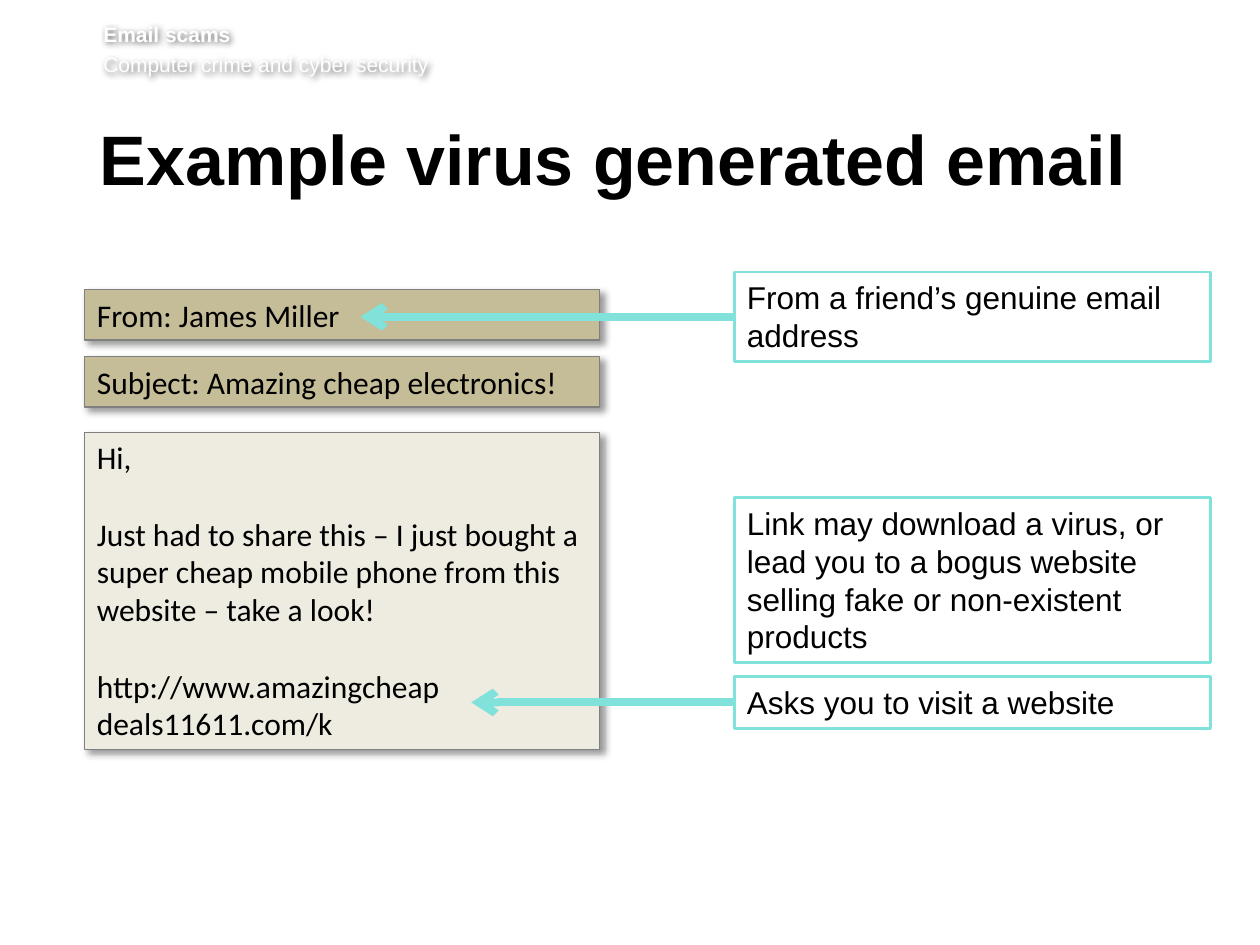
from lxml import etree
from pptx import Presentation
from pptx import util as u
from pptx.dml.color import RGBColor
from pptx.enum import shapes, text
from pptx.oxml import ns

INK, TEAL, SAND, CREAM, GREY = "000000", "81E2DC", "C4BD97", "EEECE1", "808080"


def color(hex_string):
    return RGBColor.from_string(hex_string)


def add_effects(shape, blur=None, distance=0, opacity=40):
    """Give the shape a soft shadow, or an empty effect list without blur."""
    properties = shape._element.spPr
    for old in properties.findall(ns.qn("a:effectLst")):
        properties.remove(old)
    effects = etree.SubElement(properties, ns.qn("a:effectLst"))
    if blur is not None:
        shadow = etree.SubElement(
            effects, ns.qn("a:outerShdw"), blurRad=str(u.Pt(blur)),
            dist=str(u.Pt(distance)), dir="2700000", algn="tl", rotWithShape="0")
        black = etree.SubElement(shadow, ns.qn("a:srgbClr"), val=INK)
        etree.SubElement(black, ns.qn("a:alpha"), val=str(opacity * 1000))


def write(paragraph, words, font="Arial", size=18, ink=INK, bold=False,
          before=0, after=0, line=None):
    paragraph.alignment = text.PP_ALIGN.LEFT
    paragraph.space_before, paragraph.space_after = u.Pt(before), u.Pt(after)
    if line:
        paragraph.line_spacing = u.Pt(line)
    run = paragraph.add_run()
    run.text = words
    run.font.name, run.font.size, run.font.bold = font, u.Pt(size), bold
    run.font.color.rgb = color(ink)


class EmailSlide:
    card_left, card_width = 0.67, 4.09
    callout_left, callout_width = 5.83, 3.78

    def __init__(self, presentation):
        self.slide = presentation.slides.add_slide(presentation.slide_layouts[6])

    def fill_frame(self, shape, lines, gap=0, **style):
        frame = shape.text_frame
        frame.word_wrap = True
        frame.vertical_anchor = text.MSO_ANCHOR.TOP
        for index, words in enumerate(lines):
            paragraph = frame.add_paragraph() if index else frame.paragraphs[0]
            write(paragraph, words, before=gap if index else 0, **style)

    def text_box(self, left, top, width, height, margins):
        box = self.slide.shapes.add_textbox(*map(u.Inches, (left, top, width, height)))
        frame = box.text_frame
        frame.word_wrap = True
        (frame.margin_left, frame.margin_top,
         frame.margin_right, frame.margin_bottom) = map(u.Inches, margins)
        return box

    def rectangle(self, left, top, width, height, line, weight):
        shape = self.slide.shapes.add_shape(
            shapes.MSO_SHAPE.RECTANGLE, *map(u.Inches, (left, top, width, height)))
        shape.shadow.inherit = False
        shape.line.color.rgb, shape.line.width = color(line), u.Pt(weight)
        return shape

    def card(self, top, height, fill, *lines):
        shape = self.rectangle(self.card_left, top, self.card_width, height, GREY, 0.75)
        shape.fill.solid()
        shape.fill.fore_color.rgb = color(fill)
        add_effects(shape, blur=4, distance=3)
        self.fill_frame(shape, lines, gap=22, font="Calibri")

    def callout(self, top, height, words):
        shape = self.rectangle(self.callout_left, top, self.callout_width, height, TEAL, 1.5)
        shape.fill.background()
        self.fill_frame(shape, [words])
        return shape

    def arrow(self, callout, end_x):
        middle = callout.top + callout.height // 2
        connector = self.slide.shapes.add_connector(
            shapes.MSO_CONNECTOR.STRAIGHT, callout.left, middle, u.Inches(end_x), middle)
        connector.begin_connect(callout, 1)
        connector.line.color.rgb, connector.line.width = color(TEAL), u.Pt(4.5)
        etree.SubElement(connector.line._get_or_add_ln(), ns.qn("a:tailEnd"), type="arrow")
        add_effects(connector)


def main():
    presentation = Presentation()
    presentation.slide_width, presentation.slide_height = u.Inches(10), u.Inches(7.5)
    page = EmailSlide(presentation)

    # Running header and title
    header = page.text_box(0.82, 0.17, 8.82, 0.49, (0, 0, 0, 0.05))
    frame = header.text_frame
    write(frame.paragraphs[0], "Email scams", size=12, ink="FFFFFF", bold=True)
    write(frame.add_paragraph(), "Computer crime and cyber security",
          size=12, ink="FFFFFF", before=2.9)
    add_effects(header, blur=4, distance=1, opacity=60)
    title = page.text_box(0.79, 0.99, 8.55, 0.73, (0, 0.05, 0.1, 0.05))
    write(title.text_frame.paragraphs[0], "Example virus generated email",
          size=40, bold=True, after=15, line=39)

    # Email
    page.card(2.3, 0.4, SAND, "From: James Miller")
    page.card(2.83, 0.4, SAND, "Subject: Amazing cheap electronics!")
    page.card(3.43, 2.52, CREAM, "Hi,",
              "Just had to share this – I just bought a super cheap mobile phone "
              "from this website – take a look!",
              "http://www.amazingcheap deals11611.com/k")

    # Warnings and their arrows
    sender = page.callout(2.16, 0.71, "From a friend’s genuine email address")
    page.callout(3.95, 1.31, "Link may download a virus, or lead you to a bogus website "
                 "selling fake or non-existent products")
    visit = page.callout(5.37, 0.41, "Asks you to visit a website")
    page.arrow(sender, 2.86)
    page.arrow(visit, 3.74)

    presentation.save("out.pptx")


if __name__ == "__main__":
    main()
